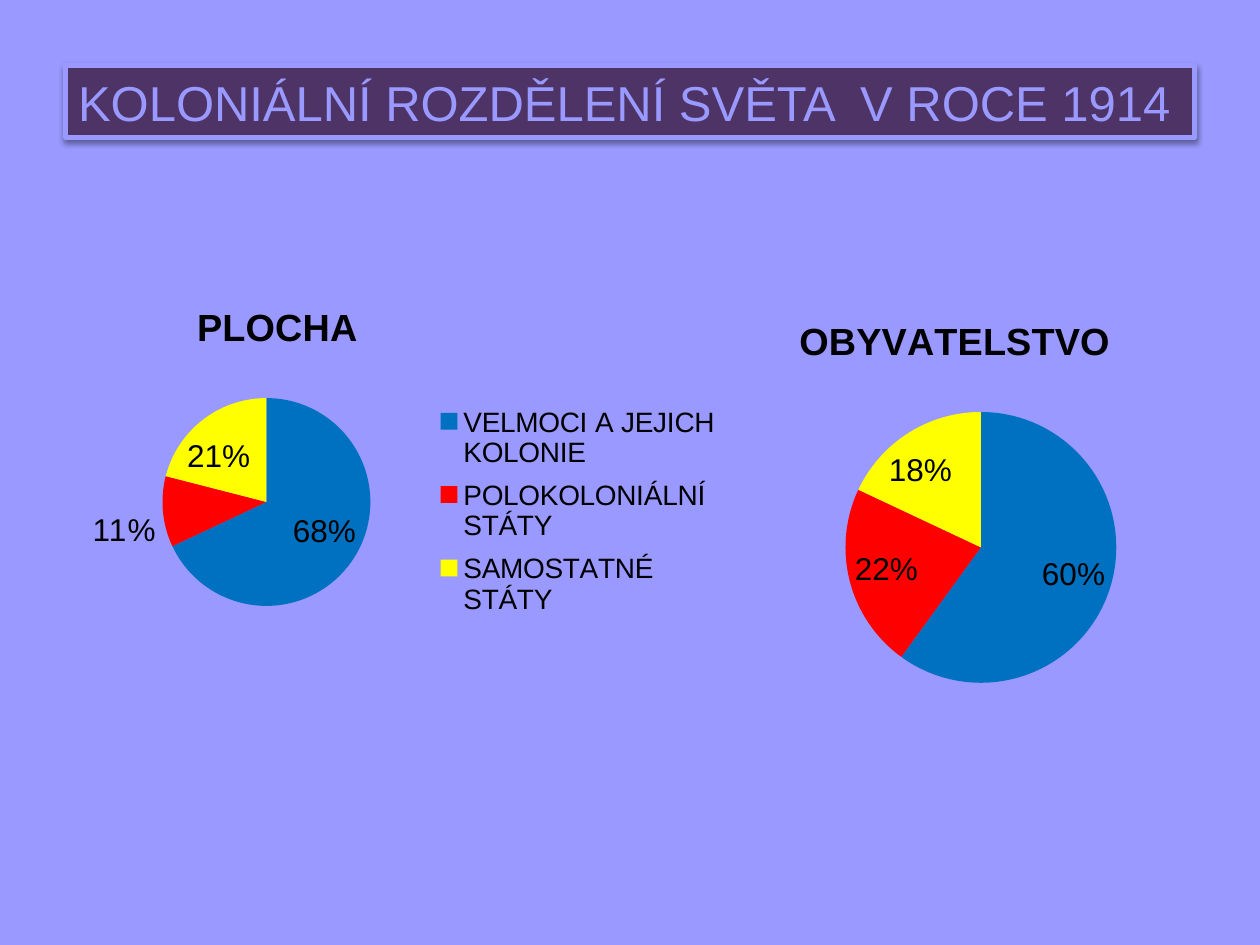
import lxml.etree
import pptx
import pptx.chart.data
import pptx.dml.color
import pptx.enum.chart
import pptx.enum.text
import pptx.oxml
import pptx.oxml.ns
import pptx.util

Inches = pptx.util.Inches
Pt = pptx.util.Pt
RGB = pptx.dml.color.RGBColor
qn = pptx.oxml.ns.qn

LILAC = RGB(0x99, 0x99, 0xFF)
PLUM = RGB(0x4D, 0x33, 0x66)
BLACK = RGB(0, 0, 0)
BLUE = RGB(0x00, 0x70, 0xC0)
RED = RGB(0xFF, 0, 0)
YELLOW = RGB(0xFF, 0xFF, 0)

SHADOW = (
    '<a:effectLst xmlns:a="http://schemas.openxmlformats.org/drawingml/2006/main">'
    '<a:outerShdw blurRad="39400" dist="20300" dir="5400000" rotWithShape="0">'
    '<a:srgbClr val="000000"><a:alpha val="38000"/></a:srgbClr>'
    '</a:outerShdw></a:effectLst>'
)


def style(item, **values):
    """Set attributes of an item from format values."""
    for name, value in values.items():
        setattr(item, name, value)


def style_font(font, size, color=BLACK, bold=False):
    """Set the face, size, weight and colour of a font."""
    style(font, name="Arial", size=Pt(size), bold=bold)
    font.color.rgb = color


def place(part, index, box, spot):
    """Fix a chart part at a spot in inches within the chart box."""
    for old in part.findall(qn("c:layout")):
        part.remove(old)
    layout = pptx.oxml.parse_xml(
        '<c:layout xmlns:c="http://schemas.openxmlformats.org/drawingml/2006/chart"/>')
    manual = lxml.etree.SubElement(layout, qn("c:manualLayout"))
    values = {"xMode": "edge", "yMode": "edge"}
    if part.tag == qn("c:plotArea"):
        values = {"layoutTarget": "inner", **values}
    sizes = box[2:] * 2
    for name, length, size in zip("xywh", spot, sizes):
        values[name] = f"{length / size:.4f}"
    for name, value in values.items():
        lxml.etree.SubElement(manual, qn("c:" + name)).set("val", value)
    part.insert(index, layout)


def add_title(slide, box, text):
    """Place the title bar in its box."""
    title = slide.shapes.title
    style(title, **dict(zip(("left", "top", "width", "height"), map(Inches, box))))
    title.fill.solid()
    title.fill.fore_color.rgb = PLUM
    title.line.color.rgb = LILAC
    title.line.width = Pt(3)
    title._element.spPr.append(pptx.oxml.parse_xml(SHADOW))
    frame = title.text_frame
    style(frame, text=text, word_wrap=True,
          auto_size=pptx.enum.text.MSO_AUTO_SIZE.NONE,
          vertical_anchor=pptx.enum.text.MSO_ANCHOR.MIDDLE)
    line = frame.paragraphs[0]
    line.alignment = pptx.enum.text.PP_ALIGN.LEFT
    style_font(line.runs[0].font, 28, LILAC)


def add_pie(slide, box, name, cats, shares, head, disc, legend=None):
    """Place a pie chart in its box, with parts at spots relative to it."""
    data = pptx.chart.data.CategoryChartData()
    data.categories = cats
    data.add_series(name, shares)
    chart = slide.shapes.add_chart(
        pptx.enum.chart.XL_CHART_TYPE.PIE, *map(Inches, box), data).chart
    style_font(chart.font, 18)
    chart.has_title = True
    frame = chart.chart_title.text_frame
    frame.text = name
    style_font(frame.paragraphs[0].runs[0].font, 21.6, bold=True)
    place(chart.chart_title._element, 1, box, head)
    place(chart._chartSpace.chart.plotArea, 0, box, disc)

    plot = chart.plots[0]
    plot.vary_by_categories = True
    for index, color in enumerate((BLUE, RED, YELLOW)):
        fill = plot.series[0].points[index].format.fill
        fill.solid()
        fill.fore_color.rgb = color
    plot.has_data_labels = True
    style(plot.data_labels, show_percentage=True, show_value=False,
          number_format="0%", number_format_is_linked=False,
          position=pptx.enum.chart.XL_LABEL_POSITION.BEST_FIT)
    style_font(plot.data_labels.font, 18)

    chart.has_legend = legend is not None
    if legend:
        style(chart.legend, include_in_layout=False,
              position=pptx.enum.chart.XL_LEGEND_POSITION.RIGHT)
        style_font(chart.legend.font, 16)
        place(chart.legend._element, 1, box, legend)


def main():
    """Build and save the slide."""
    deck = pptx.Presentation()
    style(deck, slide_width=Inches(10), slide_height=Inches(7.5))
    slide = deck.slides.add_slide(deck.slide_layouts.get_by_name("Title Only"))
    slide.background.fill.solid()
    slide.background.fill.fore_color.rgb = LILAC
    add_title(slide, (0.52, 0.52, 8.96, 0.57), "KOLONIÁLNÍ ROZDĚLENÍ SVĚTA  V ROCE 1914")
    add_pie(slide, (0.43, 2.18, 5.35, 3.39), "PLOCHA",
            ("VELMOCI A JEJICH KOLONIE", "POLOKOLONIÁLNÍ STÁTY", "SAMOSTATNÉ STÁTY"),
            (68, 11, 21), head=(1.08, 0.17), disc=(0.86, 0.98, 1.65, 1.65),
            legend=(3.02, 0.95, 2.27, 1.85))
    add_pie(slide, (5.47, 2.25, 4.09, 3.31), "OBYVATELSTVO", ("1", "2", "3"),
            (60, 22, 18), head=(0.82, 0.21), disc=(1.24, 1.02, 2.15, 2.15))
    deck.save("out.pptx")


if __name__ == "__main__":
    main()
